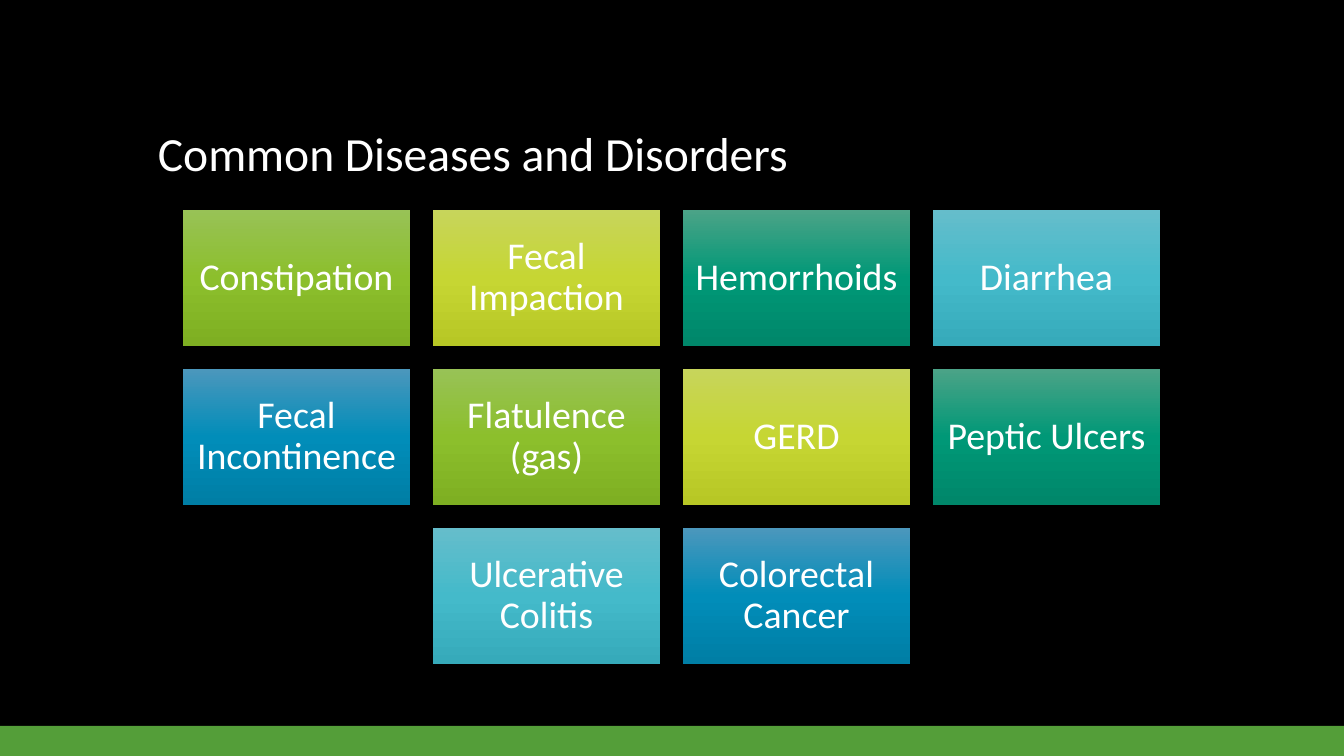
from copy import deepcopy

from pptx import Presentation
from pptx.dml.color import RGBColor
from pptx.enum.shapes import MSO_SHAPE
from pptx.enum.text import MSO_ANCHOR, PP_ALIGN
from pptx.oxml.ns import qn
from pptx.util import Pt

PX = 914400 / 100.8
WIDE, HIGH = 1344, 756

BLACK = RGBColor(0x00, 0x00, 0x00)
WHITE = RGBColor(0xFF, 0xFF, 0xFF)
GREEN = RGBColor(0x54, 0x9E, 0x39)

# Top, middle and bottom colour of each tile gradient
LEAF = RGBColor(0x98, 0xC2, 0x56), RGBColor(0x8C, 0xBF, 0x2C), RGBColor(0x7E, 0xAF, 0x22)
LIME = RGBColor(0xC7, 0xD5, 0x5B), RGBColor(0xC6, 0xD6, 0x33), RGBColor(0xB7, 0xC7, 0x25)
JADE = RGBColor(0x4B, 0xA3, 0x87), RGBColor(0x00, 0x98, 0x77), RGBColor(0x00, 0x87, 0x6A)
AQUA = RGBColor(0x65, 0xBD, 0xCB), RGBColor(0x44, 0xBA, 0xCA), RGBColor(0x36, 0xAA, 0xBA)
BLUE = RGBColor(0x4B, 0x97, 0xBC), RGBColor(0x01, 0x8D, 0xB9), RGBColor(0x00, 0x7E, 0xA5)
TINTS = [LEAF, LIME, JADE, AQUA, BLUE]

ROWS = [
    ["Constipation", "Fecal Impaction", "Hemorrhoids", "Diarrhea"],
    ["Fecal Incontinence", "Flatulence (gas)", "GERD", "Peptic Ulcers"],
    ["Ulcerative Colitis", "Colorectal Cancer"],
]
TILE_W, TILE_H, GAP = 227, 136, 23
GRID_TOP = 210


def emu(*sizes):
    return [round(size * PX) for size in sizes]


class Deck:
    font = "Calibri"

    def __init__(self):
        self.file = Presentation()
        self.file.slide_width, self.file.slide_height = emu(WIDE, HIGH)
        self.slide = self.file.slides.add_slide(self.file.slide_layouts[6])
        fill = self.slide.background.fill
        fill.solid()
        fill.fore_color.rgb = BLACK

    def label(self, shape, text, size, anchor, align):
        frame = shape.text_frame
        frame.text = text
        frame.word_wrap = True
        frame.vertical_anchor = anchor
        line = frame.paragraphs[0]
        line.alignment = align
        line.line_spacing = 0.9
        font = line.runs[0].font
        font.name, font.size = self.font, Pt(size)
        font.color.rgb = WHITE

    def title(self, text, *box):
        shape = self.slide.shapes.add_textbox(*emu(*box))
        self.label(shape, text, 34, MSO_ANCHOR.BOTTOM, PP_ALIGN.LEFT)

    def rect(self, *box):
        shape = self.slide.shapes.add_shape(MSO_SHAPE.RECTANGLE, *emu(*box))
        shape.shadow.inherit = False
        shape.line.fill.background()
        return shape

    def band(self, color, *box):
        fill = self.rect(*box).fill
        fill.solid()
        fill.fore_color.rgb = color

    def tile(self, text, tint, *box):
        shape = self.rect(*box)
        self.blend(shape, tint)
        frame = shape.text_frame
        frame.margin_left, frame.margin_top = emu(11, 11)
        frame.margin_right, frame.margin_bottom = emu(11, 11)
        self.label(shape, text, 27, MSO_ANCHOR.MIDDLE, PP_ALIGN.CENTER)

    def blend(self, shape, tint):
        """Fill with a three-stop gradient running from top to bottom."""
        fill = shape.fill
        fill.gradient()
        fill.gradient_angle = 270
        stops = shape._element.spPr.find(qn("a:gradFill")).find(qn("a:gsLst"))
        stops.append(deepcopy(stops[-1]))
        for stop, color, place in zip(fill.gradient_stops, tint, (0, 0.5, 1)):
            stop.color.rgb = color
            stop.position = place


def main():
    deck = Deck()
    deck.band(GREEN, 0, 726, WIDE, 30)
    deck.title("Common Diseases and Disorders", 148, 51, 1048, 136)
    count = 0
    for row, names in enumerate(ROWS):
        span = len(names) * (TILE_W + GAP) - GAP
        left = (WIDE - span) // 2
        top = GRID_TOP + row * (TILE_H + GAP)
        for col, name in enumerate(names):
            tint = TINTS[count % len(TINTS)]
            deck.tile(name, tint, left + col * (TILE_W + GAP), top, TILE_W, TILE_H)
            count += 1
    deck.file.save("out.pptx")


if __name__ == "__main__":
    main()
